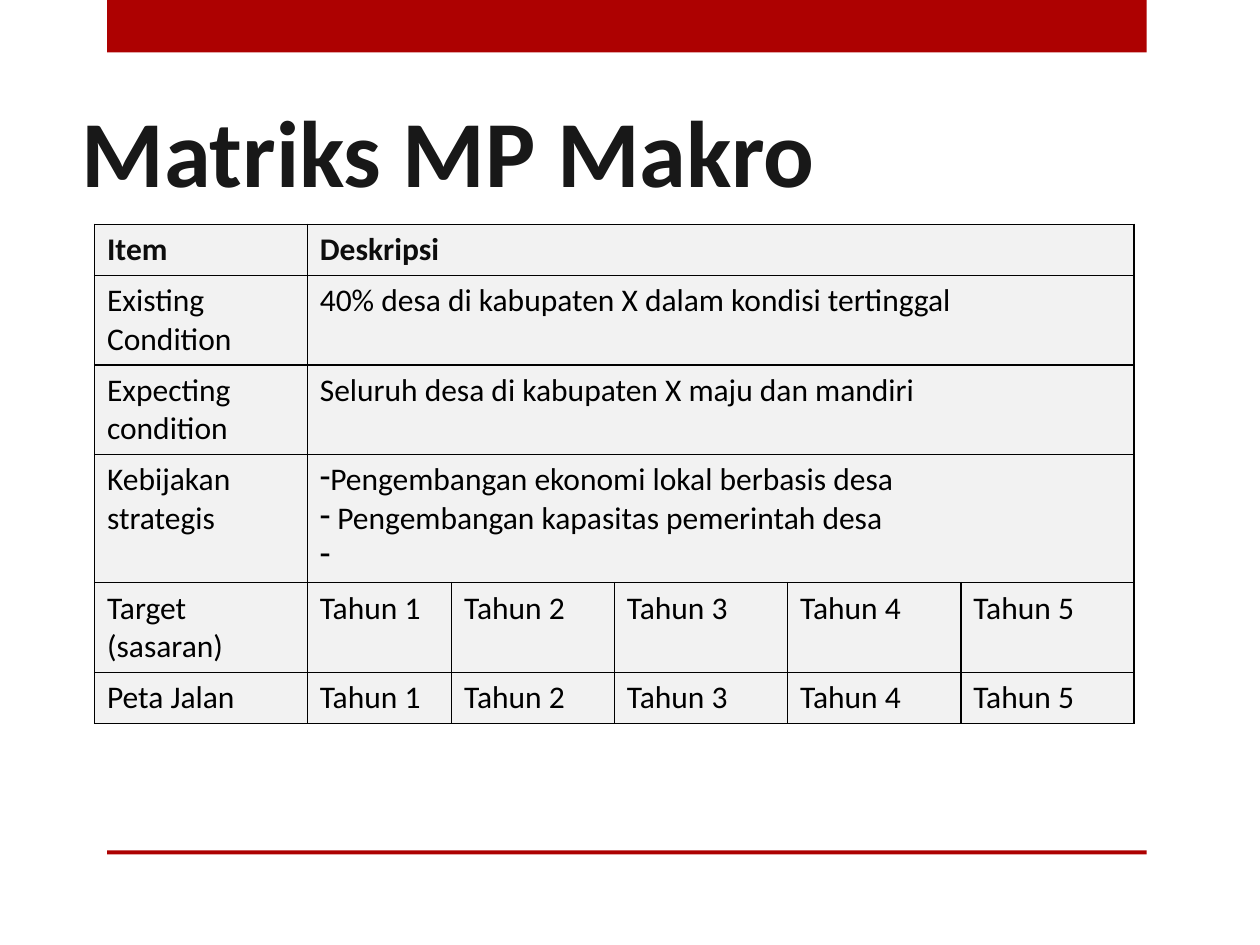
from lxml.etree import SubElement
from pptx import Presentation
from pptx.dml.color import RGBColor
from pptx.enum.shapes import MSO_SHAPE
from pptx.enum.text import MSO_ANCHOR
from pptx.oxml.ns import qn
from pptx.util import Pt

COLORS = {"red": "AD0101", "title": "181818", "header": "0D0D0D",
          "text": "000000", "border": "000000", "cell": "F2F2F2"}
FONT = "Calibri"


def style_runs(tf, size, color, bold=False):
    for p in tf.paragraphs:
        for r in p.runs:
            r.font.name = FONT
            r.font.size = Pt(size)
            r.font.bold = bold
            r.font.color.rgb = RGBColor.from_string(COLORS[color])


def add_borders(cell):
    tcPr = cell._tc.get_or_add_tcPr()
    for side in ("lnL", "lnR", "lnT", "lnB"):
        ln = SubElement(tcPr, qn(f"a:{side}"), w=str(Pt(1)))
        fill = SubElement(ln, qn("a:solidFill"))
        SubElement(fill, qn("a:srgbClr"), val=COLORS["border"])


prs = Presentation()
prs.slide_width, prs.slide_height = Pt(720), Pt(540)
s = prs.slides.add_slide(prs.slide_layouts[6])

# Red bands at the top and bottom
for top, height in ((0, 30), (486, 2.2)):
    sp = s.shapes.add_shape(MSO_SHAPE.RECTANGLE, Pt(61.2), Pt(top), Pt(594), Pt(height))
    sp.shadow.inherit = False
    sp.fill.solid()
    sp.fill.fore_color.rgb = RGBColor.from_string(COLORS["red"])
    sp.line.fill.background()

# Title
tf = s.shapes.add_textbox(Pt(39.6), Pt(28), Pt(648), Pt(90)).text_frame
tf.word_wrap = True
tf.vertical_anchor = MSO_ANCHOR.BOTTOM
tf.margin_bottom = 0
tf.text = "Matriks MP Makro"
style_runs(tf, 54, "title", bold=True)

# Matrix: a row with one description spans all the year columns
years = [f"Tahun {n}" for n in range(1, 6)]
policies = ["Pengembangan ekonomi lokal berbasis desa",
            " Pengembangan kapasitas pemerintah desa",
            " "]
rows = [
    (29.2, ["Item", "Deskripsi"]),
    (51.2, ["Existing Condition", "40% desa di kabupaten X dalam kondisi tertinggal"]),
    (51.2, ["Expecting condition", "Seluruh desa di kabupaten X maju dan mandiri"]),
    (73.2, ["Kebijakan strategis", "\n".join(policies)]),
    (51.2, ["Target (sasaran)", *years]),
    (29.2, ["Peta Jalan", *years]),
]
col_widths = [121.6, 82.5, 93, 99, 99, 99]

table = s.shapes.add_table(len(rows), len(col_widths), Pt(54), Pt(128.2),
                           Pt(sum(col_widths)), Pt(sum(h for h, _ in rows))).table
for col, width in zip(table.columns, col_widths):
    col.width = Pt(width)

for i, (height, texts) in enumerate(rows):
    table.rows[i].height = Pt(height)
    for cell in table.rows[i].cells:
        add_borders(cell)
        cell.fill.solid()
        cell.fill.fore_color.rgb = RGBColor.from_string(COLORS["cell"])
    if len(texts) == 2:
        table.cell(i, 1).merge(table.cell(i, len(col_widths) - 1))
    for j, text in enumerate(texts):
        tf = table.cell(i, j).text_frame
        tf.text = text
        style_runs(tf, 18, "header" if i == 0 else "text", bold=i == 0)

# Dash bullets for the strategic policies
for p in table.cell(3, 1).text_frame.paragraphs:
    SubElement(p._p.get_or_add_pPr(), qn("a:buChar"), char="-")

prs.save("out.pptx")
